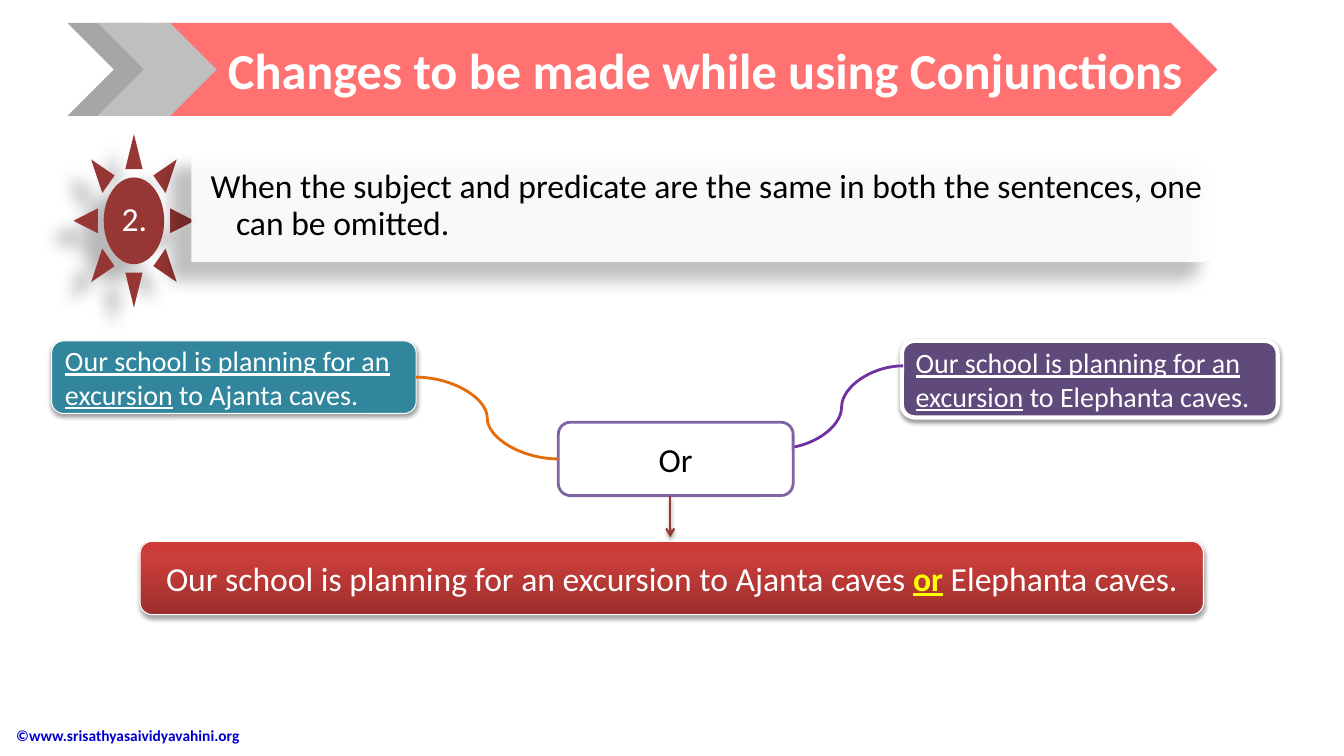
from lxml import etree
from pptx import Presentation
from pptx import util as u
from pptx.dml.color import RGBColor
from pptx.enum import shapes, text
from pptx.oxml import parse_xml
from pptx.oxml.ns import nsdecls, qn

Cm = u.Cm
Kind = shapes.MSO_SHAPE
LEFT, CENTER = text.PP_ALIGN.LEFT, text.PP_ALIGN.CENTER
SOFT_SHADOW = (3.1, 1.6, 90, 38)
FIRM_SHADOW = (3.1, 1.8, 90, 35)
LONG_SHADOW = (11.8, 19.7, 141, 28)


def write(shape, runs, size=24, color="FFFFFF", bold=False, align=CENTER,
          insets=(0.25, 0.13, 0.25, 0.13), spacing=1.0):
    """Fill a shape with one paragraph of (text, font overrides) runs."""
    frame = shape.text_frame
    frame.word_wrap = True
    frame.auto_size = text.MSO_AUTO_SIZE.NONE
    frame.vertical_anchor = text.MSO_ANCHOR.MIDDLE
    (frame.margin_left, frame.margin_top,
     frame.margin_right, frame.margin_bottom) = [Cm(inset) for inset in insets]
    paragraph = frame.paragraphs[0]
    paragraph.alignment = align
    paragraph.line_spacing = spacing
    paragraph.space_before = u.Pt(0)
    for content, overrides in runs:
        run = paragraph.add_run()
        run.text = content
        font = run.font
        font.name, font.size = "Calibri", u.Pt(size)
        font.bold = overrides.get("bold", bold)
        font.underline = overrides.get("underline", False)
        font.color.rgb = RGBColor.from_string(overrides.get("color", color))
    return paragraph


def style(item, fill=None, line=None, width=0.75, shadow=None):
    """Set fill, line and (blur, distance, angle, opacity) shadow."""
    if fill:
        item.fill.solid()
        item.fill.fore_color.rgb = RGBColor.from_string(fill)
    if line:
        item.line.color.rgb = RGBColor.from_string(line)
        item.line.width = u.Pt(width)
    else:
        item.line.fill.background()
    properties = item._element.spPr
    if hasattr(item, "shadow"):
        item.shadow.inherit = False
        effects = properties.find(qn("a:effectLst"))
    else:
        effects = etree.SubElement(properties, qn("a:effectLst"))
    if shadow:
        blur, distance, angle, opacity = shadow
        effects.append(parse_xml(
            f'<a:outerShdw {nsdecls("a")} blurRad="{u.Pt(blur)}" dist="{u.Pt(distance)}" '
            f'dir="{angle * 60000}" rotWithShape="0"><a:srgbClr val="000000">'
            f'<a:alpha val="{opacity * 1000}"/></a:srgbClr></a:outerShdw>'))


presentation = Presentation()
presentation.slide_width, presentation.slide_height = Cm(33.87), Cm(19.05)
slide = presentation.slides.add_slide(presentation.slide_layouts[1])
tree = slide.shapes
title, statement = slide.placeholders

# Copyright line
copyright_box = tree.add_textbox(Cm(0), Cm(18.03), Cm(9.1), Cm(1))
write(copyright_box, [("©www.srisathyasaividyavahini.org", {})], size=11,
      color="0000CC", bold=True, align=LEFT, insets=(0.41, 0.13, 0.25, 0.13))

# The two sentences to be joined
cards = []
for box, fill, border, ending in [
    ((1.3, 8.59, 9.19, 1.83), "31859C", 0.75, " to Ajanta caves."),
    ((22.73, 8.59, 9.47, 1.93), "604A7B", 3, " to Elephanta caves."),
]:
    card = tree.add_shape(Kind.ROUNDED_RECTANGLE, *[Cm(value) for value in box])
    style(card, fill, "FFFFFF", border, SOFT_SHADOW)
    write(card, [("Our school is planning for an excursion", {"underline": True}),
                 (ending, {})], size=20, align=LEFT)
    cards.append(card)

# Conjunction and its connectors
right_curve = tree.add_connector(shapes.MSO_CONNECTOR.CURVE,
                                 Cm(19.66), Cm(11.3), Cm(22.76), Cm(9.22))
style(right_curve, line="7030A0", width=2)

conjunction = tree.add_shape(Kind.ROUNDED_RECTANGLE, Cm(14.07), Cm(10.64), Cm(5.92), Cm(1.85))
style(conjunction, "FFFFFF", "8064A2", 2)
write(conjunction, [("Or", {})], color="000000")

left_curve = tree.add_connector(shapes.MSO_CONNECTOR.CURVE,
                                Cm(10.49), Cm(9.5), Cm(14.07), Cm(11.56))
left_curve.begin_connect(cards[0], 3)
left_curve.end_connect(conjunction, 1)
style(left_curve, line="E46C0A", width=2)

arrow = tree.add_connector(shapes.MSO_CONNECTOR.STRAIGHT,
                           Cm(16.89), Cm(12.5), Cm(16.89), Cm(13.54))
style(arrow, line="953735", width=1.5, shadow=FIRM_SHADOW)
etree.SubElement(arrow.line._get_or_add_ln(), qn("a:tailEnd"), type="arrow")

# Joined sentence
result = tree.add_shape(Kind.ROUNDED_RECTANGLE, Cm(3.53), Cm(13.64), Cm(26.8), Cm(1.85))
style(result, None, "FFFFFF", 0.75, FIRM_SHADOW)
result.fill.gradient()
gradient = result._element.spPr.find(qn("a:gradFill"))
stops = "".join(f'<a:gs pos="{position * 1000}"><a:srgbClr val="{color}"/></a:gs>'
                for position, color in [(0, "9C2F2D"), (80, "CB3E3A"), (100, "CE3B37")])
gradient.getparent().replace(gradient, parse_xml(
    f'<a:gradFill {nsdecls("a")} rotWithShape="1"><a:gsLst>{stops}</a:gsLst>'
    '<a:lin ang="16200000" scaled="0"/></a:gradFill>'))
write(result, [("Our school is planning for an excursion to Ajanta caves ", {}),
               ("or", {"color": "FFFF00", "bold": True, "underline": True}),
               (" Elephanta caves.", {})])

# Numbered rule
sun = tree.add_shape(Kind.SUN, Cm(1.19), Cm(4.04), Cm(4.37), Cm(3.05))
sun.rotation = 90
style(sun, "973735", shadow=LONG_SHADOW)
number = tree.add_textbox(Cm(2.84), Cm(4.78), Cm(1.09), Cm(1.55))
write(number, [("2.", {})], insets=(0.05,) * 4, spacing=0.9)

panel = tree.add_shape(Kind.ROUND_2_SAME_RECTANGLE, Cm(16.36), Cm(-7.77), Cm(2.84), Cm(25.91))
panel.rotation = 90
style(panel, "FFFFFF", shadow=LONG_SHADOW)
panel_color = panel._element.spPr.find(qn("a:solidFill"))[0]
etree.SubElement(panel_color, qn("a:alpha"), val="90000")

# Title banner
for kind, left, width, fill in [
    (Kind.CHEVRON, 1.7, 3, "A6A6A6"),
    (Kind.PENTAGON, 3.96, 26.72, "FF7271"),
    (Kind.CHEVRON, 2.46, 3, "BFBFBF"),
]:
    style(tree.add_shape(kind, Cm(left), Cm(0.58), Cm(width), Cm(2.34)), fill)

# Placeholders, raised above the panels they sit on
for placeholder, box in [(statement, (4.83, 3.91, 25.78, 2.57)),
                         (title, (5, 0.58, 25.56, 2.34))]:
    (placeholder.left, placeholder.top,
     placeholder.width, placeholder.height) = [Cm(value) for value in box]
    tree._spTree.append(placeholder._element)

properties = statement.text_frame.paragraphs[0]._p.get_or_add_pPr()
properties.set("marL", str(Cm(0.64)))
properties.set("indent", str(Cm(-0.64)))
etree.SubElement(properties, qn("a:buNone"))
write(statement, [("When the subject and predicate are the same in both the sentences, "
                   "one can be omitted.", {})],
      color="000000", align=LEFT, insets=(0.48, 0.05, 0.05, 0.05), spacing=0.9)
write(title, [("Changes to be made while using Conjunctions", {})],
      size=36, bold=True, insets=(0,) * 4)

presentation.save("out.pptx")
